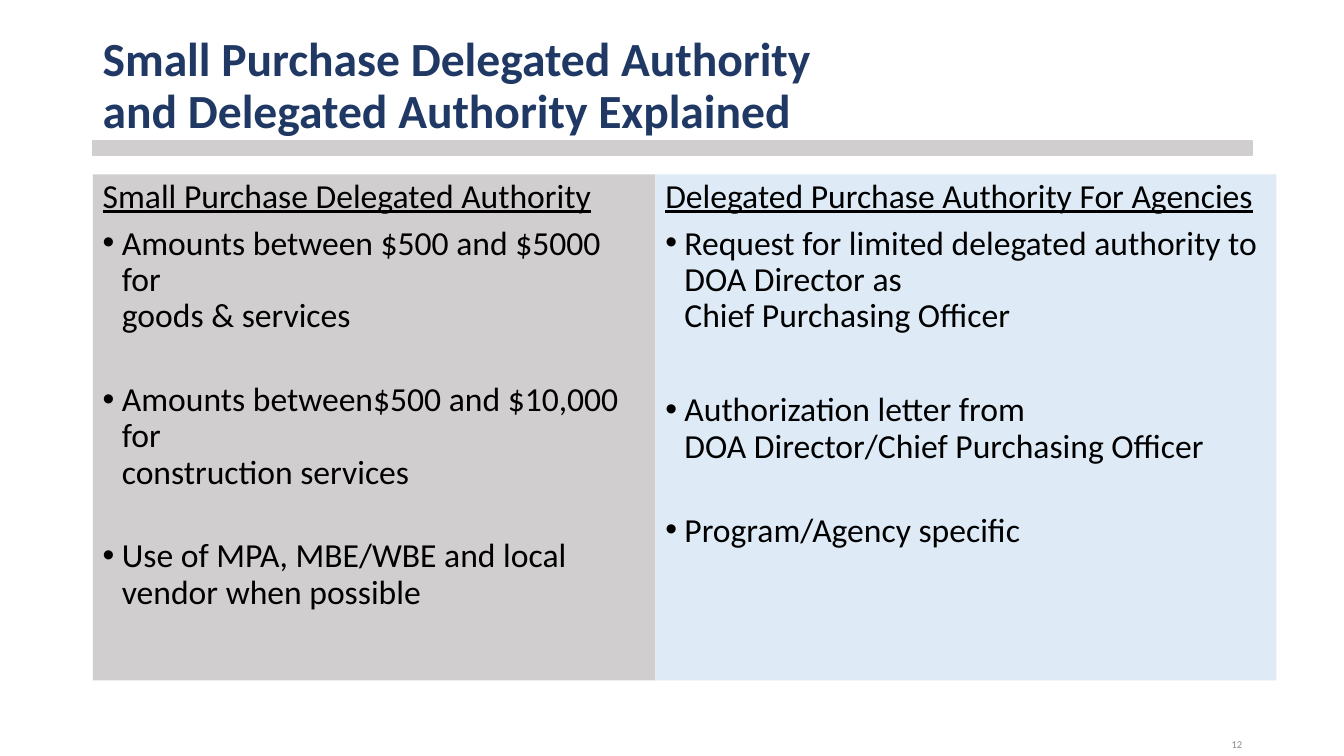
"""Build a slide comparing small purchase and delegated purchase authority."""
import pptx
import pptx.dml.color
import pptx.enum.shapes
import pptx.enum.text
import pptx.util
from lxml import etree
from pptx.util import Inches

RGBColor = pptx.dml.color.RGBColor
GRAY = RGBColor(0xD0, 0xCE, 0xCE)
PALE_BLUE = RGBColor(0xDE, 0xEB, 0xF7)
NAVY = RGBColor(0x20, 0x38, 0x64)
BLACK = RGBColor(0, 0, 0)
PAGE_GRAY = RGBColor(0x8C, 0x8C, 0x8C)
LEFT = 0.92
COLUMN_TOP, COLUMN_HEIGHT = 1.73, 5.02
INDENT = Inches(0.19)

SMALL_PURCHASE = [
    ("Amounts between $500 and $5000 for\ngoods & services", 7.5),
    ("Amounts between$500 and $10,000 for\nconstruction services", 34),
    ("Use of MPA, MBE/WBE and local vendor when possible", 34),
]
DELEGATED_PURCHASE = [
    ("Request for limited delegated authority to DOA Director as\n"
     "Chief Purchasing Officer", 7.5),
    ("Authorization letter from\nDOA Director/Chief Purchasing Officer", 41.4),
    ("Program/Agency specific", 34),
]


def style_font(para, size, color, bold=False, underline=False):
    """Set the font of a whole paragraph."""
    para.font.name = "Calibri"
    para.font.size = pptx.util.Pt(size)
    para.font.color.rgb = color
    para.font.bold = bold
    para.font.underline = underline


def add_bullet(para):
    """Give a paragraph a hanging round bullet."""
    properties = para._p.get_or_add_pPr()
    properties.set("marL", str(INDENT))
    properties.set("indent", str(-INDENT))
    namespace = pptx.oxml.ns.qn("a:buFont"), pptx.oxml.ns.qn("a:buChar")
    etree.SubElement(properties, namespace[0], typeface="Arial")
    etree.SubElement(properties, namespace[1], char="•")


def add_panel(page, left, top, width, height, color):
    """Add a flat filled rectangle."""
    panel = page.shapes.add_shape(
        pptx.enum.shapes.MSO_SHAPE.RECTANGLE,
        Inches(left), Inches(top), Inches(width), Inches(height))
    panel.shadow.inherit = False
    panel.fill.solid()
    panel.fill.fore_color.rgb = color
    panel.line.fill.background()
    return panel


def add_label(page, left, top, width, height, text):
    """Add a vertically centred text box and return its paragraph."""
    box = page.shapes.add_textbox(
        Inches(left), Inches(top), Inches(width), Inches(height))
    frame = box.text_frame
    frame.word_wrap = True
    frame.vertical_anchor = pptx.enum.text.MSO_ANCHOR.MIDDLE
    para = frame.paragraphs[0]
    para.text = text
    return para


def add_column(page, left, width, color, heading, points):
    """Add a filled column with an underlined heading and bullets."""
    panel = add_panel(page, left, COLUMN_TOP, width, COLUMN_HEIGHT, color)
    frame = panel.text_frame
    frame.word_wrap = True
    frame.vertical_anchor = pptx.enum.text.MSO_ANCHOR.TOP
    para = frame.paragraphs[0]
    para.text = heading
    para.alignment = pptx.enum.text.PP_ALIGN.LEFT
    para.line_spacing = 0.9
    style_font(para, 24, BLACK, underline=True)
    for text, gap in points:
        para = frame.add_paragraph()
        para.text = text
        para.alignment = pptx.enum.text.PP_ALIGN.LEFT
        para.line_spacing = 0.9
        para.space_before = pptx.util.Pt(gap)
        add_bullet(para)
        style_font(para, 24, BLACK)


def main():
    """Build and save the slide."""
    deck = pptx.Presentation()
    deck.slide_width = Inches(13.33)
    deck.slide_height = Inches(7.5)
    page = deck.slides.add_slide(deck.slide_layouts[6])

    rule = add_panel(page, LEFT, 1.4, 11.5, 0.14, GRAY)
    rule.line.color.rgb = GRAY
    rule.line.width = pptx.util.Pt(1)
    title = add_label(
        page, LEFT, 0.4, 11.5, 0.93,
        "Small Purchase Delegated Authority\nand Delegated Authority Explained")
    title.line_spacing = 0.9
    style_font(title, 34, NAVY, bold=True)

    add_column(page, LEFT, 5.58, GRAY,
               "Small Purchase Delegated Authority", SMALL_PURCHASE)
    add_column(page, LEFT + 5.58, 6.16, PALE_BLUE,
               "Delegated Purchase Authority For Agencies", DELEGATED_PURCHASE)

    number = add_label(page, 9.42, 7.26, 3, 0.25, "12")
    number.alignment = pptx.enum.text.PP_ALIGN.RIGHT
    style_font(number, 7.5, PAGE_GRAY)
    deck.save("out.pptx")


if __name__ == "__main__":
    main()
